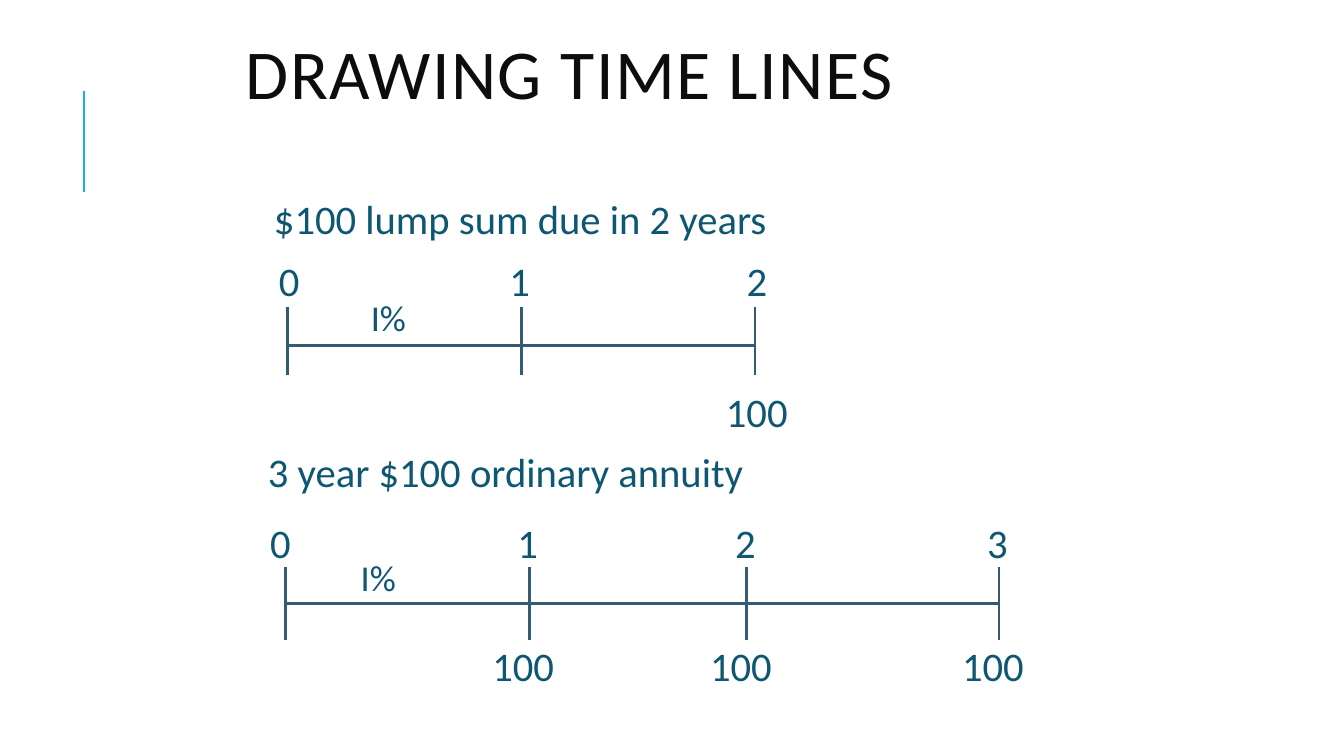
from dataclasses import dataclass

from lxml import etree
from pptx import Presentation
from pptx import util as u
from pptx.dml.color import RGBColor
from pptx.enum import shapes, text
from pptx.oxml import ns

SLIDE_WIDTH, SLIDE_HEIGHT = u.Inches(13.33), u.Inches(7.5)
COLUMN, ROW = SLIDE_WIDTH / 40, SLIDE_HEIGHT / 22.5

TITLE_BLACK = RGBColor(0x0D, 0x0D, 0x0D)
LABEL_TEAL = RGBColor(0x0E, 0x57, 0x72)
AXIS_BLUE = RGBColor(0x33, 0x5B, 0x74)
ACCENT_BLUE = RGBColor(0x1C, 0xAD, 0xE4)

LABEL_SIZE, RATE_SIZE, TITLE_SIZE = 29, 26, 50
LABEL_HEIGHT, RATE_HEIGHT = 1.77, 1.62
PERIOD_WIDTH, PAYMENT_WIDTH, RATE_WIDTH = 1.29, 2.62, 1.77


@dataclass(frozen=True)
class Tick:
    column: float
    payment: str = ""
    period_shift: float = 0


@dataclass(frozen=True)
class TimeLine:
    """Places are in grid columns and rows; rows are the tops of text boxes."""
    heading: str
    heading_column: float
    heading_width: float
    heading_row: float
    period_row: float
    rate_column: float
    rate_row: float
    tick_top: float
    axis_row: float
    tick_bottom: float
    payment_row: float
    payment_shift: float
    ticks: tuple[Tick, ...]


TIME_LINES = (
    TimeLine("$100 lump sum due in 2 years", 7.86, 20.5, 5.61, 7.47, 10.74, 8.64,
             9.15, 10.29, 11.16, 11.37, 0.15,
             (Tick(8.55, period_shift=0.1), Tick(15.51),
              Tick(22.47, "100", 0.1))),
    TimeLine("3 year $100 ordinary annuity", 7.68, 16.5, 13.14, 15.27, 10.44, 16.38,
             16.89, 17.97, 19.05, 18.93, -0.08,
             (Tick(8.49, period_shift=-0.1), Tick(15.75, "100"),
              Tick(22.23, "100"), Tick(29.73, "100"))),
)


def across(columns: float) -> int:
    return round(columns * COLUMN)


def down(rows: float) -> int:
    return round(rows * ROW)


def add_line(slide, start: tuple[float, float], end: tuple[float, float],
             color: RGBColor = AXIS_BLUE, points: float = 2) -> None:
    line = slide.shapes.add_connector(
        shapes.MSO_CONNECTOR.STRAIGHT,
        across(start[0]), down(start[1]), across(end[0]), down(end[1]))
    line.line.color.rgb = color
    line.line.width = u.Pt(points)
    etree.SubElement(line._element.spPr, ns.qn("a:effectLst"))


def add_label(slide, wording: str, column: float, row: float, width: float,
              height: float = LABEL_HEIGHT, size: float = LABEL_SIZE,
              color: RGBColor = LABEL_TEAL, **frame_format):
    """Add one line of text and return its run and paragraph."""
    frame = slide.shapes.add_textbox(
        across(column), down(row), across(width), down(height)).text_frame
    frame_values = {"word_wrap": False,
                    "auto_size": text.MSO_AUTO_SIZE.SHAPE_TO_FIT_TEXT,
                    **frame_format}
    for name, value in frame_values.items():
        setattr(frame, name, value)
    paragraph = frame.paragraphs[0]
    run = paragraph.add_run()
    run.text = wording
    for name, value in {"name": "Calibri", "size": u.Pt(size)}.items():
        setattr(run.font, name, value)
    run.font.color.rgb = color
    return run, paragraph


def add_title(slide) -> None:
    run, paragraph = add_label(
        slide, "DRAWING TIME LINES", 7.02, 0.75, 26.77, 3.24, TITLE_SIZE, TITLE_BLACK,
        word_wrap=True, auto_size=text.MSO_AUTO_SIZE.NONE,
        vertical_anchor=text.MSO_ANCHOR.MIDDLE)
    paragraph.line_spacing = 0.8
    run.font._element.set("spc", "100")


def add_time_line(slide, line: TimeLine) -> None:
    add_label(slide, line.heading, line.heading_column, line.heading_row,
              line.heading_width, word_wrap=True)
    add_line(slide, (line.ticks[0].column, line.axis_row),
             (line.ticks[-1].column, line.axis_row))
    add_label(slide, "I%", line.rate_column, line.rate_row, RATE_WIDTH,
              RATE_HEIGHT, RATE_SIZE)
    for period, tick in enumerate(line.ticks):
        add_line(slide, (tick.column, line.tick_top), (tick.column, line.tick_bottom))
        add_label(slide, str(period),
                  tick.column + tick.period_shift - PERIOD_WIDTH / 2,
                  line.period_row, PERIOD_WIDTH)
        if tick.payment:
            add_label(slide, tick.payment,
                      tick.column + line.payment_shift - PAYMENT_WIDTH / 2,
                      line.payment_row, PAYMENT_WIDTH)


def main() -> None:
    deck = Presentation()
    deck.slide_width, deck.slide_height = SLIDE_WIDTH, SLIDE_HEIGHT
    slide = deck.slides.add_slide(deck.slide_layouts[6])
    add_line(slide, (2.5, 5.7), (2.5, 2.7), ACCENT_BLUE, 1.5)
    add_title(slide)
    for line in TIME_LINES:
        add_time_line(slide, line)
    deck.save("out.pptx")


if __name__ == "__main__":
    main()
